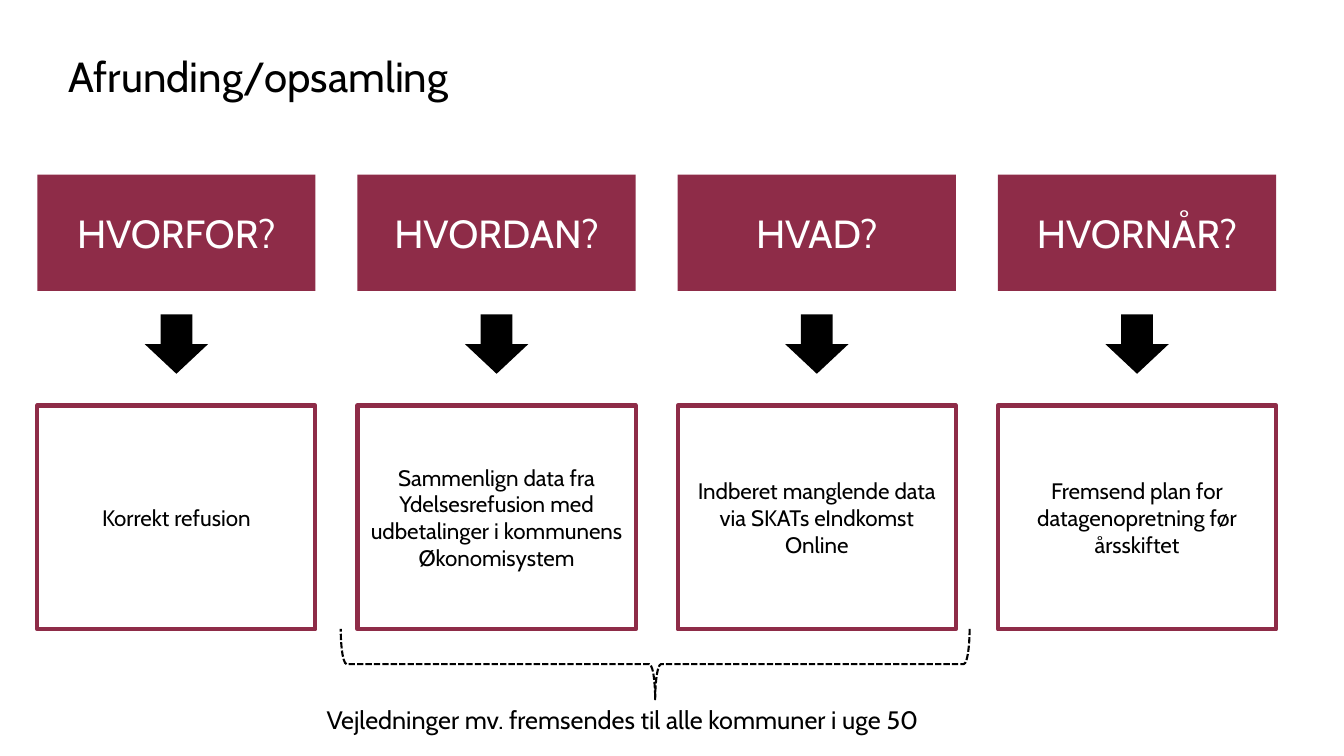
from pptx import Presentation
from pptx.dml.color import RGBColor
from pptx.enum.dml import MSO_LINE_DASH_STYLE as Dash
from pptx.enum.shapes import MSO_AUTO_SHAPE_TYPE as Shape
from pptx.enum.text import MSO_ANCHOR as Anchor, MSO_AUTO_SIZE as AutoSize, PP_ALIGN as Align
from pptx.util import Cm, Pt

COLOURS = {"wine": "8E2C48", "black": "000000", "white": "FFFFFF"}
COLUMNS = [
    ("HVORFOR?", "Korrekt refusion"),
    ("HVORDAN?", "Sammenlign data fra Ydelsesrefusion med udbetalinger i kommunens Økonomisystem"),
    ("HVAD?", "Indberet manglende data via SKATs eIndkomst Online"),
    ("HVORNÅR?", "Fremsend plan for datagenopretning før årsskiftet"),
]
LEFT, PITCH, WIDTH = 0.94, 8.07, 7.01
ARROW_WIDTH, ARROW_HEIGHT = 1.5, 1.6


def apply(target, values):
    for name, value in values.items():
        setattr(target, name, value)


def colour(name):
    return RGBColor.from_string(COLOURS[name])


class SlideBuilder:
    font = "Cabin"

    def __init__(self, deck):
        self.page = deck.slides.add_slide(deck.slide_layouts[5])

    def label(self, box, text, size, ink="black", frame=None, para=None):
        apply(box.text_frame, {"word_wrap": True, **(frame or {})})
        paragraph = box.text_frame.paragraphs[0]
        apply(paragraph, para or {})
        span = paragraph.add_run()
        span.text = text
        apply(span.font, {"name": self.font, "size": Pt(size)})
        span.font.color.rgb = colour(ink)

    def title(self, text, *place):
        box = self.page.shapes.title
        apply(box, dict(zip(("left", "top", "width", "height"), map(Cm, place))))
        frame = dict.fromkeys(("margin_left", "margin_top", "margin_right", "margin_bottom"), 0)
        frame.update(vertical_anchor=Anchor.TOP, auto_size=AutoSize.NONE)
        self.label(box, text, 30, frame=frame, para={"alignment": Align.LEFT, "line_spacing": Pt(27)})

    def shape(self, kind, *place, fill=None, line=None, line_format=None, rotation=0):
        shape = self.page.shapes.add_shape(kind, *map(Cm, place))
        shape.shadow.inherit = False
        shape.rotation = rotation
        for part, ink in ((shape.fill, fill), (shape.line.fill, line)):
            if ink:
                part.solid()
                part.fore_color.rgb = colour(ink)
            else:
                part.background()
        apply(shape.line, line_format or {})
        return shape

    def panel(self, text, size, ink, *place, **style):
        box = self.shape(Shape.RECTANGLE, *place, **style)
        self.label(box, text, size, ink, {"vertical_anchor": Anchor.MIDDLE}, {"alignment": Align.CENTER})

    def caption(self, text, size, *place):
        box = self.page.shapes.add_textbox(*map(Cm, place))
        self.label(box, text, size, frame={"auto_size": AutoSize.SHAPE_TO_FIT_TEXT})


def main():
    deck = Presentation()
    apply(deck, {"slide_width": Cm(33.87), "slide_height": Cm(19.05)})
    slide = SlideBuilder(deck)
    slide.title("Afrunding/opsamling", 1.73, 1.6, 30.28, 2.34)
    for index, (question, answer) in enumerate(COLUMNS):
        left = LEFT + index * PITCH
        slide.panel(question, 28, "white", left, 4.4, WIDTH, 2.93, fill="wine")
        slide.panel(answer, 16, "black", left, 10.22, WIDTH, 5.64,
                    line="wine", line_format={"width": Pt(3)})
        slide.shape(Shape.RIGHT_ARROW, left + (WIDTH - ARROW_WIDTH) / 2, 7.87,
                    ARROW_WIDTH, ARROW_HEIGHT, fill="black", rotation=90)
    slide.shape(Shape.RIGHT_BRACE, 15.62, 8.81, 1.78, 15.85, line="black", rotation=90,
                line_format={"width": Pt(1.5), "dash_style": Dash.SQUARE_DOT})
    slide.caption("Vejledninger mv. fremsendes til alle kommuner i uge 50", 18, 7.98, 17.63, 17.17, 1.02)
    deck.save("out.pptx")


if __name__ == "__main__":
    main()
